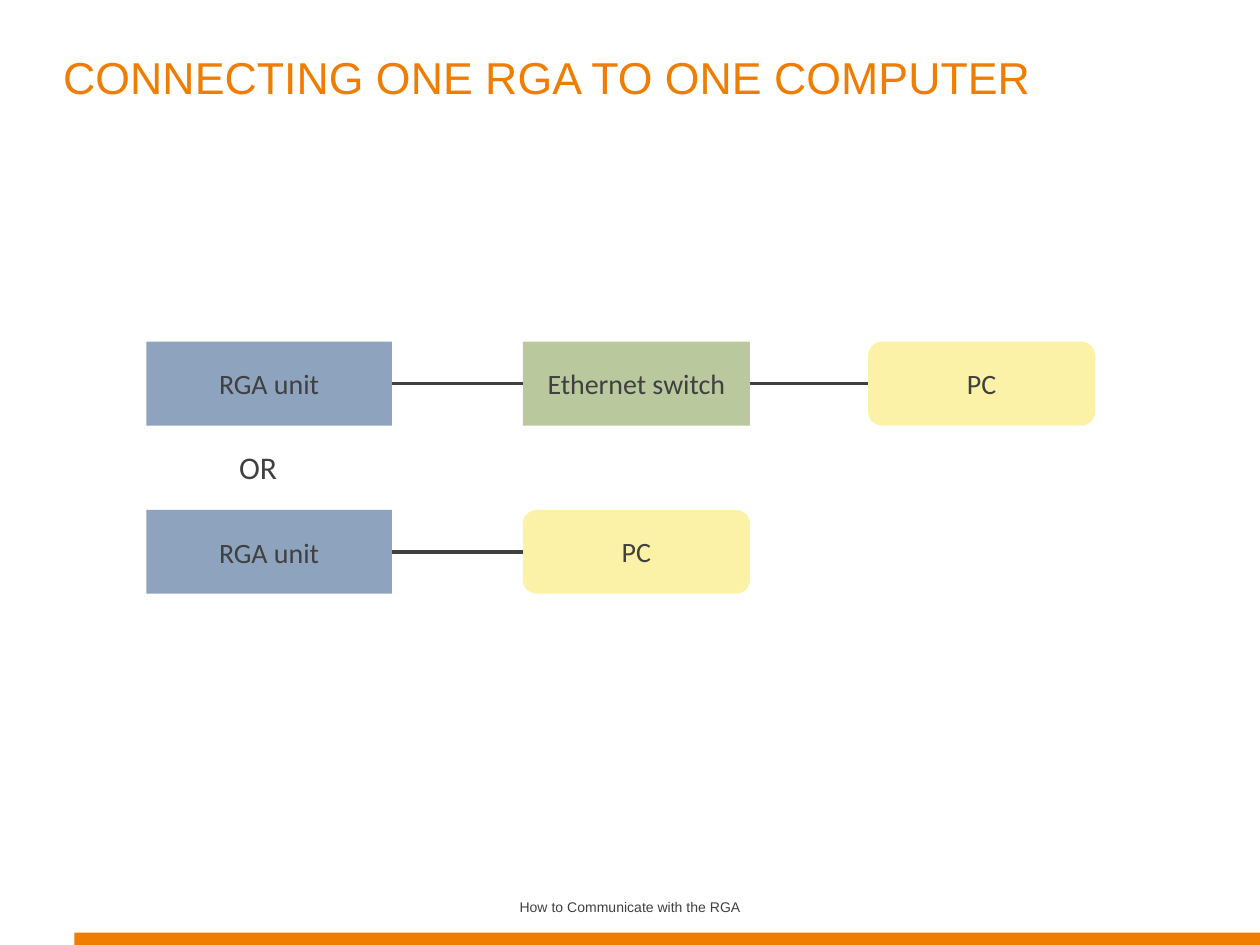
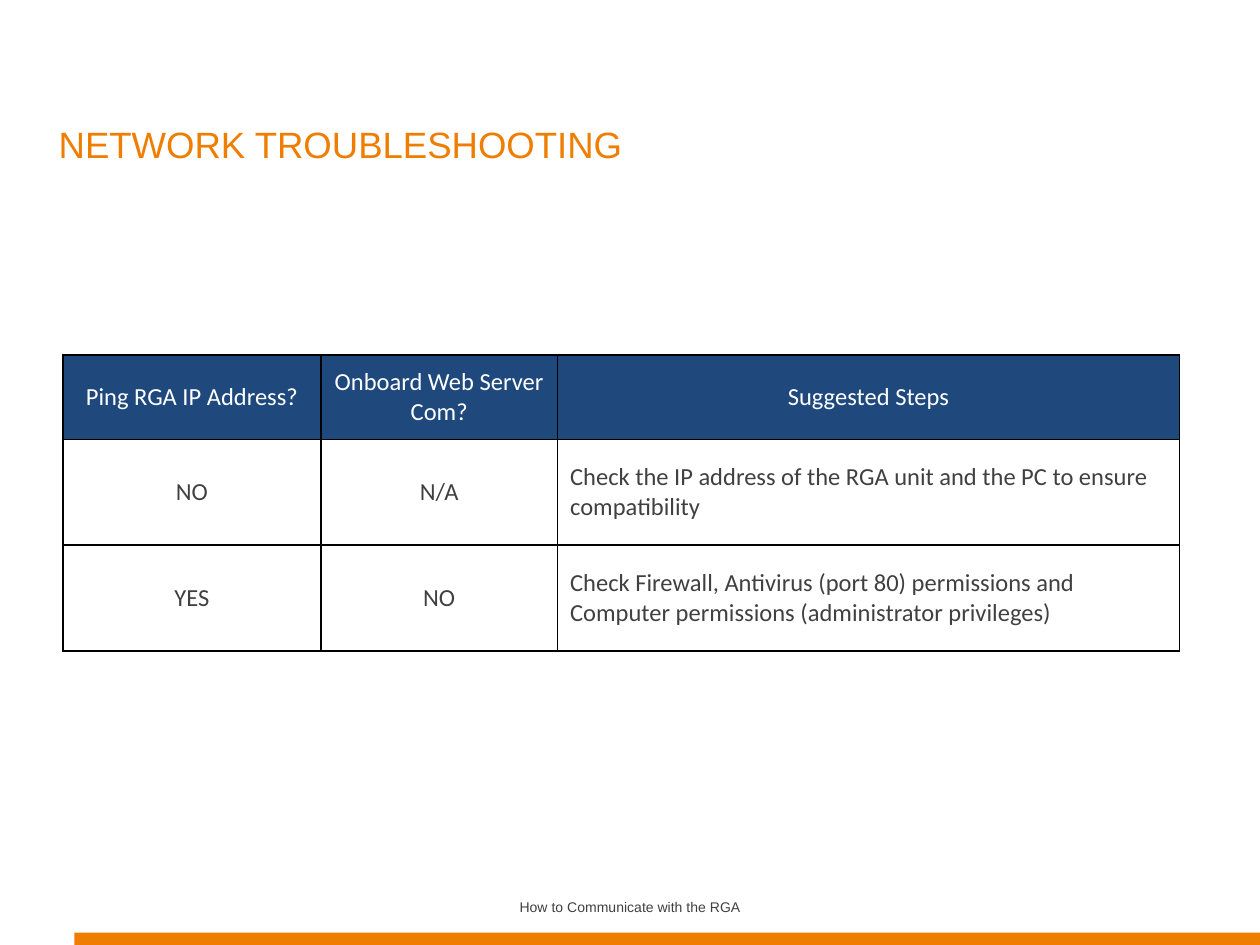
from lxml.etree import SubElement
from pptx import Presentation
from pptx.dml.color import RGBColor
from pptx.enum.shapes import MSO_CONNECTOR, MSO_SHAPE as SHAPE
from pptx.enum.text import MSO_ANCHOR as ANCHOR, MSO_AUTO_SIZE as AUTO, PP_ALIGN as ALIGN
from pptx.oxml import parse_xml
from pptx.oxml.ns import nsdecls, qn
from pptx.util import Cm, Pt

# Content
FOOTER = "How to Communicate with the RGA"
CONNECT_TITLE = "CONNECTING ONE RGA TO ONE COMPUTER"
TROUBLE_TITLE = "NETWORK TROUBLESHOOTING"
CHAINS = [["RGA unit", "Ethernet switch", "PC"], ["RGA unit", "PC"]]
STEPS = [
    ["Ping RGA IP Address?", "Onboard Web Server\nCom?", "Suggested Steps"],
    ["NO", "N/A", "Check the IP address of the RGA unit and the PC to ensure compatibility"],
    ["YES", "NO", "Check Firewall, Antivirus (port 80) permissions and "
                  "Computer permissions (administrator privileges)"],
]

# Shared style
ORANGE, NAVY, GREEN, YELLOW = "EF7D00", "1F497D", "77933C", "F9E551"
GREY, WHITE, BLACK = "404040", "FFFFFF", "000000"
DEVICES = {
    "RGA unit": (SHAPE.RECTANGLE, NAVY),
    "Ethernet switch": (SHAPE.RECTANGLE, GREEN),
    "PC": (SHAPE.ROUNDED_RECTANGLE, YELLOW),
}

# Diagram and table measures in cm
DEVICE_COLS = [(2.95, 4.95), (10.54, 4.58), (17.5, 4.58)]
DEVICE_H, CHAIN_TOP, CHAIN_STEP = 1.69, 6.89, 3.39
COL_WIDTHS, ROW_HEIGHTS = [5.2, 4.77, 12.54], [1.7, 2.13, 2.13]


def rgb(color):
    return RGBColor.from_string(color)


def cm(*lengths):
    return [Cm(v) for v in lengths]


def write(tf, text, size=16, font="Calibri", color=GREY, align=ALIGN.CENTER,
          anchor=ANCHOR.MIDDLE, wrap=True, baseline=None):
    tf.word_wrap = wrap
    tf.vertical_anchor = anchor
    for i, line in enumerate(text.split("\n")):
        p = tf.paragraphs[0] if i == 0 else tf.add_paragraph()
        p.alignment = align
        r = p.add_run()
        r.text = line
        r.font.size, r.font.name = Pt(size), font
        r.font.color.rgb = rgb(color)
        if baseline:
            r.font._element.set("baseline", str(baseline * 1000))


def add_box(slide, kind, at, color, alpha=None):
    sp = slide.shapes.add_shape(kind, *cm(*at))
    sp.shadow.inherit = False
    sp.fill.solid()
    sp.fill.fore_color.rgb = rgb(color)
    sp.line.fill.background()
    if alpha:
        clr = sp._element.spPr.find(qn("a:solidFill"))[0]
        SubElement(clr, qn("a:alpha"), val=str(alpha * 1000))
    return sp


def join(slide, left, right):
    line = slide.shapes.add_connector(MSO_CONNECTOR.STRAIGHT, 0, 0, 0, 0)
    line.begin_connect(left, 3)
    line.end_connect(right, 1)
    line.line.color.rgb = rgb(GREY)
    line.line.width = Pt(2)
    SubElement(line._element.spPr, qn("a:effectLst"))


def add_slide(prs, title, at, size, anchor):
    slide = prs.slides.add_slide(prs.slide_layouts[5])
    add_box(slide, SHAPE.RECTANGLE, (1.5, 18.8, 23.9, 0.25), ORANGE)
    footer = slide.shapes.add_textbox(*cm(8.68, 17.78, 8.05, 1.02))
    write(footer.text_frame, FOOTER, size=8, font="Arial")
    sp = slide.shapes.title
    sp.left, sp.top, sp.width, sp.height = cm(*at)
    sp.text_frame.auto_size = AUTO.NONE
    write(sp.text_frame, title, size=size, font="Arial", color=ORANGE,
          align=ALIGN.LEFT, anchor=anchor, baseline=30)
    return slide


def set_borders(cell, color=BLACK, width=1):
    tcPr = cell._tc.get_or_add_tcPr()
    for i, side in enumerate("LRTB"):
        tcPr.insert(i, parse_xml(
            f'<a:ln{side} {nsdecls("a")} w="{Pt(width)}"><a:solidFill>'
            f'<a:srgbClr val="{color}"/></a:solidFill></a:ln{side}>'))


def build_connection(prs):
    slide = add_slide(prs, CONNECT_TITLE, (1.02, 0.69, 22.86, 3.18), 44, ANCHOR.TOP)
    for row, chain in enumerate(CHAINS):
        top = CHAIN_TOP + row * CHAIN_STEP
        boxes = []
        for name, (left, width) in zip(chain, DEVICE_COLS):
            kind, color = DEVICES[name]
            sp = add_box(slide, kind, (left, top, width, DEVICE_H), color, alpha=50)
            write(sp.text_frame, name)
            boxes.append(sp)
        for left_box, right_box in zip(boxes, boxes[1:]):
            join(slide, left_box, right_box)
    # Alternative between the two chains
    choice = slide.shapes.add_textbox(*cm(4.57, 8.91, 1.47, 1.02))
    choice.text_frame.auto_size = AUTO.SHAPE_TO_FIT_TEXT
    write(choice.text_frame, "OR", size=18, align=ALIGN.LEFT, anchor=ANCHOR.TOP, wrap=False)


def build_troubleshooting(prs):
    slide = add_slide(prs, TROUBLE_TITLE, (0.93, 1.47, 22.86, 3.18), 36, ANCHOR.MIDDLE)
    table = slide.shapes.add_table(
        len(STEPS), len(COL_WIDTHS),
        *cm(1.27, 7.16, sum(COL_WIDTHS), sum(ROW_HEIGHTS))).table
    table.first_row = table.horz_banding = False
    for col, width in zip(table.columns, COL_WIDTHS):
        col.width = Cm(width)
    for r, (texts, height) in enumerate(zip(STEPS, ROW_HEIGHTS)):
        table.rows[r].height = Cm(height)
        for c, text in enumerate(texts):
            cell = table.cell(r, c)
            header = r == 0
            if header:
                cell.fill.solid()
                cell.fill.fore_color.rgb = rgb(NAVY)
            else:
                cell.fill.background()
            write(cell.text_frame, text, size=14, color=WHITE if header else GREY,
                  align=ALIGN.CENTER if header or c < 2 else ALIGN.LEFT)
            cell.vertical_anchor = ANCHOR.MIDDLE
            set_borders(cell)


def main():
    prs = Presentation()
    prs.slide_width, prs.slide_height = cm(25.4, 19.05)
    build_connection(prs)
    build_troubleshooting(prs)
    prs.save("out.pptx")


if __name__ == "__main__":
    main()
